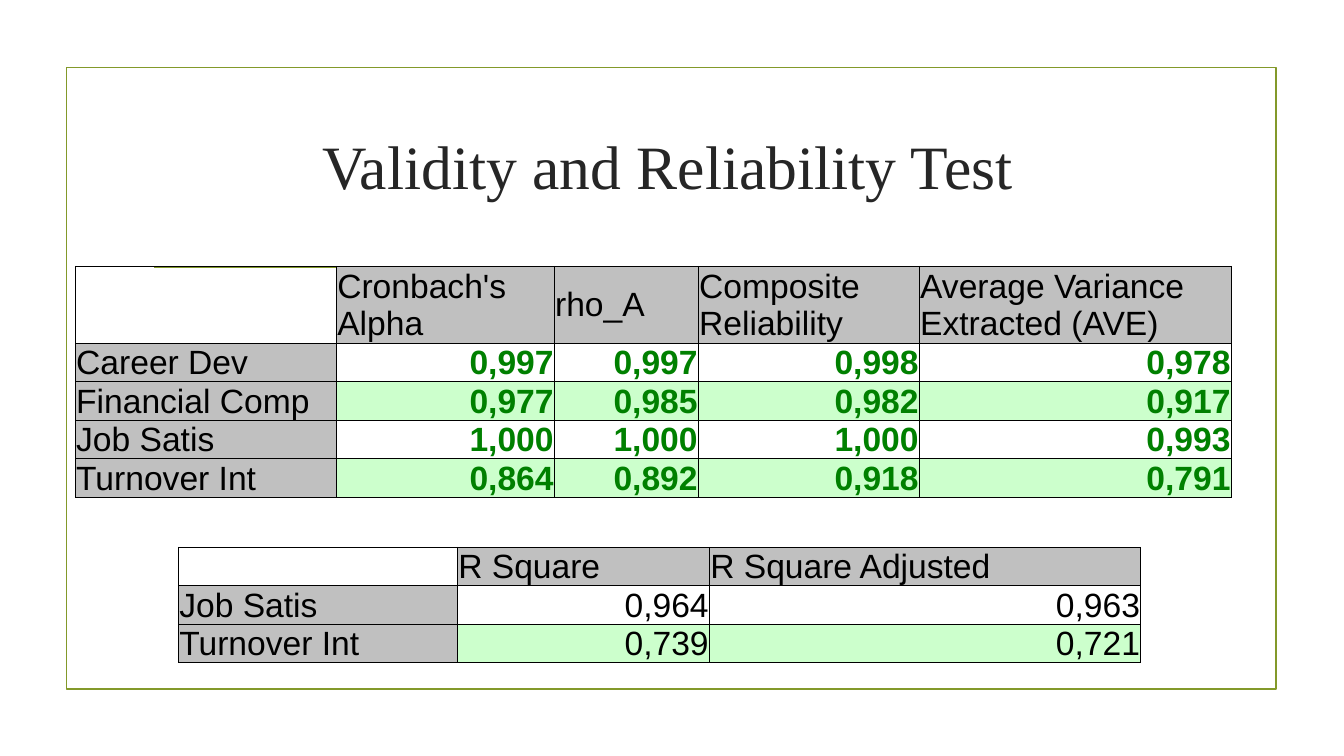
from dataclasses import dataclass

from lxml import etree
from pptx import Presentation
from pptx.dml.color import RGBColor
from pptx.enum.shapes import MSO_CONNECTOR, MSO_SHAPE
from pptx.enum.text import MSO_ANCHOR, PP_ALIGN
from pptx.oxml.ns import qn
from pptx.util import Cm, Pt

LEFT, CENTER, RIGHT = PP_ALIGN.LEFT, PP_ALIGN.CENTER, PP_ALIGN.RIGHT
MIDDLE = MSO_ANCHOR.MIDDLE
RECTANGLE = MSO_SHAPE.RECTANGLE
STRAIGHT = MSO_CONNECTOR.STRAIGHT
TITLE_ONLY = 5


@dataclass(frozen=True)
class Theme:
    title_font: str = "Times New Roman"
    table_font: str = "Arial"
    title_size: int = 44
    table_size: int = 24
    line_width: float = 1.25
    border_width: float = 0.5
    accent: str = "83992A"
    title_color: str = "262626"
    text: str = "000000"
    passed: str = "008000"
    header_fill: str = "C0C0C0"
    band_fill: str = "CCFFCC"


@dataclass(frozen=True)
class Box:
    """A region of the slide, in centimetres."""
    left: float
    top: float
    width: float
    height: float

    def lengths(self):
        return [Cm(value) for value in (self.left, self.top, self.width, self.height)]


THEME = Theme()
ROW_HEIGHT = 0.97
CELL_FORMAT = {
    "margin_left": Cm(0.02),
    "margin_right": Cm(0.02),
    "margin_top": Cm(0.02),
    "margin_bottom": Cm(0),
    "vertical_anchor": MIDDLE,
}

RELIABILITY = [
    ["", "Cronbach's Alpha", "rho_A", "Composite Reliability",
     "Average Variance Extracted (AVE)"],
    ["Career Dev", "0,997", "0,997", "0,998", "0,978"],
    ["Financial Comp", "0,977", "0,985", "0,982", "0,917"],
    ["Job Satis", "1,000", "1,000", "1,000", "0,993"],
    ["Turnover Int", "0,864", "0,892", "0,918", "0,791"],
]
R_SQUARE = [
    ["", "R Square", "R Square Adjusted"],
    ["Job Satis", "0,964", "0,963"],
    ["Turnover Int", "0,739", "0,721"],
]


def set_font(font, name, size, color, bold=False):
    values = {"name": name, "size": Pt(size), "bold": bold}
    for attribute, value in values.items():
        setattr(font, attribute, value)
    font.color.rgb = RGBColor.from_string(color)


def set_line(line):
    line.color.rgb = RGBColor.from_string(THEME.accent)
    line.width = Pt(THEME.line_width)


def add_frame(slide, box):
    # Border around the content
    frame = slide.shapes.add_shape(RECTANGLE, *box.lengths())
    frame.shadow.inherit = False
    frame.fill.background()
    set_line(frame.line)

    # Rule below the title
    inset, drop = 2.2, 5.03
    y = Cm(box.top + drop)
    rule = slide.shapes.add_connector(
        STRAIGHT, Cm(box.left + inset), y, Cm(box.left + box.width - inset), y)
    set_line(rule.line)
    etree.SubElement(rule.element.spPr, qn("a:effectLst"))


def add_title(slide, box, text):
    title = slide.shapes.title
    title.left, title.top, title.width, title.height = box.lengths()
    frame = title.text_frame
    frame.text = text
    frame.word_wrap = True
    frame.vertical_anchor = MIDDLE
    paragraph = frame.paragraphs[0]
    paragraph.alignment = CENTER
    set_font(paragraph.runs[0].font, THEME.title_font, THEME.title_size, THEME.title_color)


def add_borders(cell):
    properties = cell._tc.get_or_add_tcPr()
    for side in ("a:lnL", "a:lnR", "a:lnT", "a:lnB"):
        border = etree.SubElement(properties, qn(side), w=str(Pt(THEME.border_width)))
        fill = etree.SubElement(border, qn("a:solidFill"))
        etree.SubElement(fill, qn("a:srgbClr"), val=THEME.text)


def fill_for(row, column):
    if row == 0 and column == 0:
        return None
    if row == 0 or column == 0:
        return THEME.header_fill
    return THEME.band_fill if row % 2 == 0 else None


def format_cell(cell, text, row, column, value_style):
    for attribute, value in CELL_FORMAT.items():
        setattr(cell, attribute, value)
    add_borders(cell)

    fill = fill_for(row, column)
    if fill:
        cell.fill.solid()
        cell.fill.fore_color.rgb = RGBColor.from_string(fill)
    else:
        cell.fill.background()

    if text:
        is_value = row > 0 and column > 0
        style = value_style if is_value else {"color": THEME.text}
        cell.text = text
        paragraph = cell.text_frame.paragraphs[0]
        paragraph.alignment = RIGHT if is_value else LEFT
        set_font(paragraph.runs[0].font, THEME.table_font, THEME.table_size, **style)


def add_result_table(slide, box, rows, column_widths, value_style):
    table = slide.shapes.add_table(len(rows), len(rows[0]), *box.lengths()).table
    table.first_row = False
    table.horz_banding = False

    # Column shares fill the box; the header takes what the data rows leave
    scale = box.width / sum(column_widths)
    for column, width in zip(table.columns, column_widths):
        column.width = Cm(width * scale)
    header_height = box.height - ROW_HEIGHT * (len(rows) - 1)
    for index, row in enumerate(table.rows):
        row.height = Cm(ROW_HEIGHT if index else header_height)

    for row, texts in enumerate(rows):
        for column, text in enumerate(texts):
            format_cell(table.cell(row, column), text, row, column, value_style)


def build_results_slide(presentation):
    slide = presentation.slides.add_slide(presentation.slide_layouts[TITLE_ONLY])
    add_frame(slide, Box(1.68, 1.7, 30.48, 15.67))
    add_title(slide, Box(3.5, 2.34, 26.67, 3.63), "Validity and Reliability Test")
    add_result_table(slide, Box(1.9, 6.71, 29.13, 5.82), RELIABILITY,
                     [6.58, 5.49, 3.63, 5.57, 7.86],
                     {"color": THEME.passed, "bold": True})
    add_result_table(slide, Box(4.5, 13.79, 24.25, 2.91), R_SQUARE,
                     [7.03, 6.35, 10.87], {"color": THEME.text})


def main():
    presentation = Presentation()
    presentation.slide_width = Cm(33.87)
    presentation.slide_height = Cm(19.05)
    build_results_slide(presentation)
    presentation.save("out.pptx")


if __name__ == "__main__":
    main()
